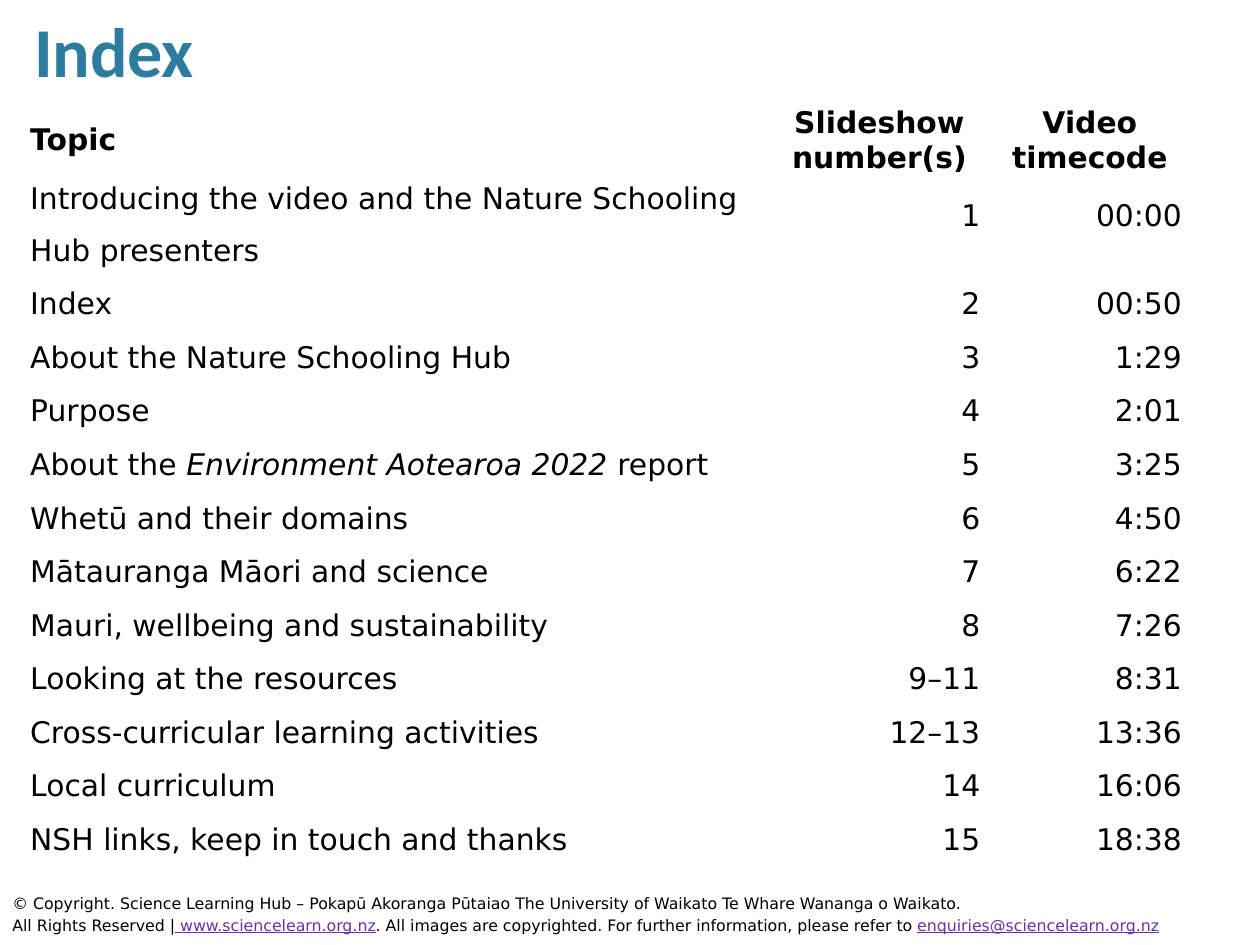
from pptx import Presentation
from pptx.dml.color import RGBColor
from pptx.enum import text
from pptx.util import Inches, Pt

BLACK, TEAL, PURPLE = "000000", "2C7C9F", "7030A0"
BODY_FONT = "DejaVu Sans"
LEFT, CENTER, RIGHT = text.PP_ALIGN.LEFT, text.PP_ALIGN.CENTER, text.PP_ALIGN.RIGHT


def add_run(paragraph, content, color=BLACK, **font_format):
    run = paragraph.add_run()
    run.text = content
    run.font.color.rgb = RGBColor.from_string(color)
    for name, value in font_format.items():
        setattr(run.font, name, value)


def set_margins(target, horizontal, vertical):
    for side in ("left", "right"):
        setattr(target, f"margin_{side}", Inches(horizontal))
    for side in ("top", "bottom"):
        setattr(target, f"margin_{side}", Inches(vertical))


presentation = Presentation()
presentation.slide_width, presentation.slide_height = Inches(10), Inches(7.5)
slide = presentation.slides.add_slide(presentation.slide_layouts[5])

# Title
title = slide.shapes.title
title.left, title.top, title.width, title.height = map(Inches, (0.17, 0, 10, 0.78))
title_frame = title.text_frame
title_frame.auto_size = text.MSO_AUTO_SIZE.NONE
title_frame.vertical_anchor = text.MSO_ANCHOR.MIDDLE
set_margins(title_frame, 0.1, 0.05)
title_frame.paragraphs[0].alignment = LEFT
add_run(title_frame.paragraphs[0], "Index", TEAL, name="Calibri", size=Pt(40), bold=True)

# Index table: a topic is a list of paragraphs, each a list of (text, italic)
header = ([[("Topic", False)]], "Slideshow number(s)", "Video timecode")
topics = [
    ([[("Introducing the video and the Nature Schooling", False)],
      [("Hub presenters", False)]], "1", "00:00"),
    ([[("Index", False)]], "2", "00:50"),
    ([[("About the Nature Schooling Hub", False)]], "3", "1:29"),
    ([[("Purpose", False)]], "4", "2:01"),
    ([[("About the ", False), ("Environment Aotearoa 2022", True), (" report", False)]],
     "5", "3:25"),
    ([[("Whetū and their domains", False)]], "6", "4:50"),
    ([[("Mātauranga Māori and science", False)]], "7", "6:22"),
    ([[("Mauri, wellbeing and sustainability", False)]], "8", "7:26"),
    ([[("Looking at the resources", False)]], "9–11", "8:31"),
    ([[("Cross-curricular learning activities", False)]], "12–13", "13:36"),
    ([[("Local curriculum", False)]], "14", "16:06"),
    ([[("NSH links, keep in touch and thanks", False)]], "15", "18:38"),
]
rows = [header] + topics
column_widths = (5.94, 1.74, 1.6)
row_heights = [0.6, 0.7] + [4.68 / 11] * 11

table = slide.shapes.add_table(
    len(rows), len(column_widths), Inches(0.17), Inches(0.84),
    Inches(sum(column_widths)), Inches(sum(row_heights))).table
table.first_row = table.horz_banding = False
for column, width in zip(table.columns, column_widths):
    column.width = Inches(width)

for row_index, (row, height) in enumerate(zip(rows, row_heights)):
    table.rows[row_index].height = Inches(height)
    is_header = row_index == 0
    for column_index, content in enumerate(row):
        cell = table.cell(row_index, column_index)
        cell.fill.background()
        set_margins(cell, 0.07, 0)
        is_topic = column_index == 0
        lines = content if is_topic else [[(content, False)]]
        for line_index, line in enumerate(lines):
            frame = cell.text_frame
            paragraph = frame.add_paragraph() if line_index else frame.paragraphs[0]
            paragraph.alignment = LEFT if is_topic else CENTER if is_header else RIGHT
            wraps_on = line_index < len(lines) - 1
            single_spaced = wraps_on or (is_header and not is_topic)
            paragraph.line_spacing = 1.0 if single_spaced else 1.5
            for words, italic in line:
                add_run(paragraph, words, name=BODY_FONT, size=Pt(17),
                        bold=is_header, italic=italic)

# Copyright lines
footer = slide.shapes.add_textbox(Inches(0), Inches(6.97), Inches(10), Inches(0.53))
footer_frame = footer.text_frame
footer_frame.word_wrap = True
set_margins(footer_frame, 0.1, 0.1)
footer_lines = [
    [("© Copyright. Science Learning Hub – Pokapū Akoranga Pūtaiao "
      "The University of Waikato Te Whare Wananga o Waikato.", False)],
    [("All Rights Reserved |", False),
     (" www.sciencelearn.org.nz", True),
     (". All images are copyrighted. For further information, please refer to ", False),
     ("enquiries@sciencelearn.org.nz", True)],
]
for line_index, line in enumerate(footer_lines):
    paragraph = footer_frame.add_paragraph() if line_index else footer_frame.paragraphs[0]
    paragraph.line_spacing = 1.15
    for words, is_address in line:
        add_run(paragraph, words, PURPLE if is_address else BLACK,
                name=BODY_FONT, size=Pt(9), underline=is_address)

presentation.save("out.pptx")
